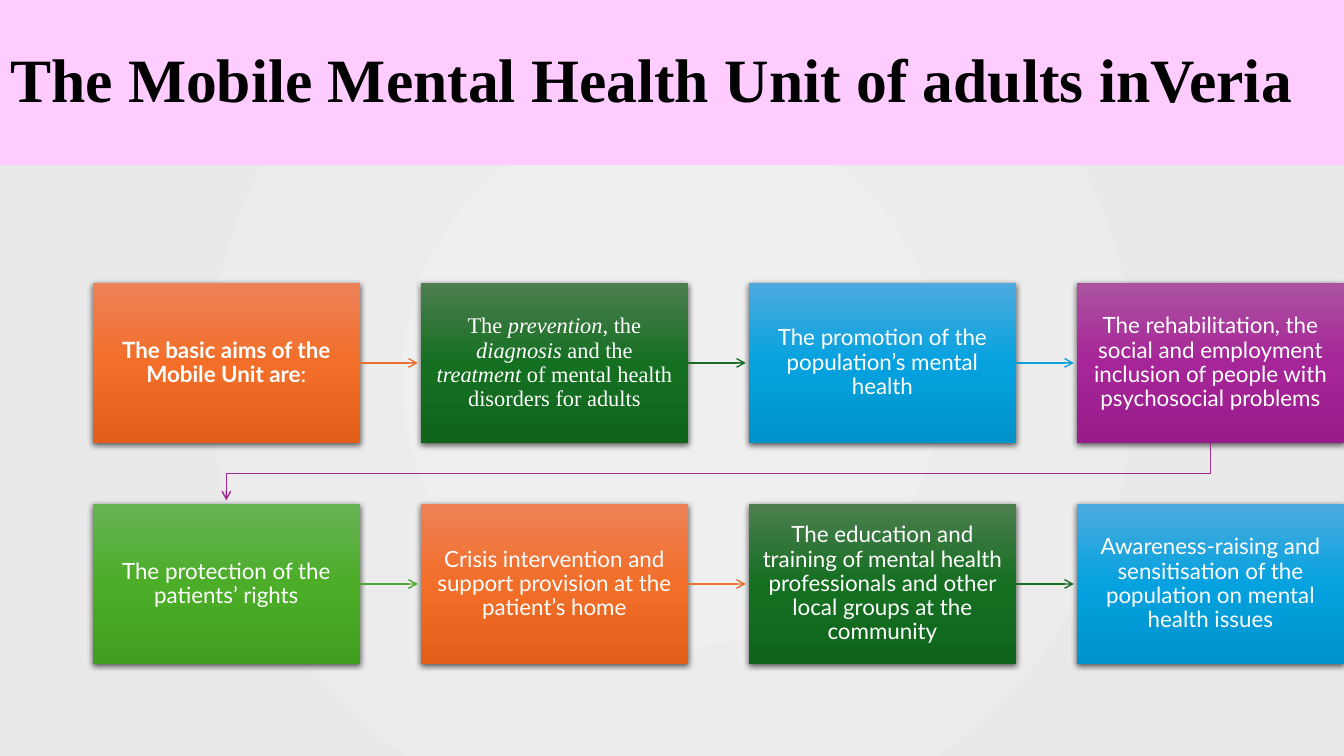
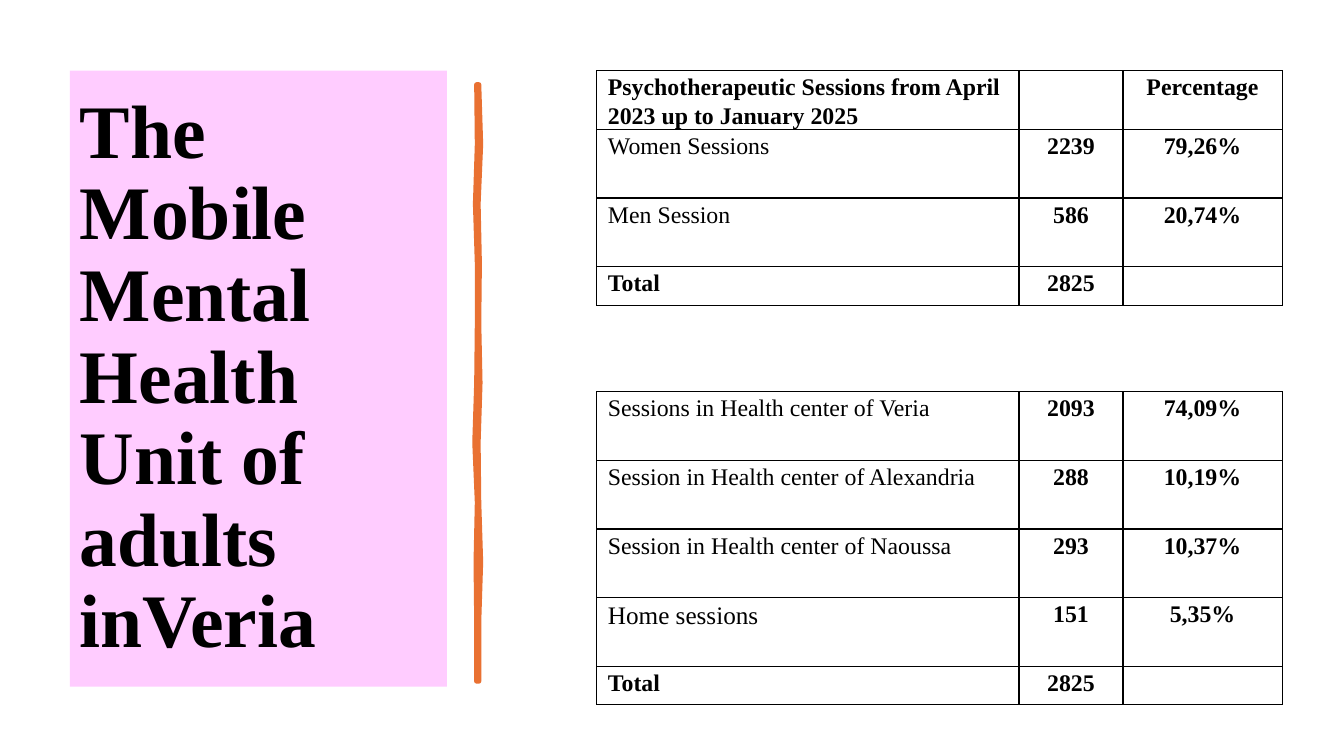
import dataclasses

import lxml.etree
import pptx
import pptx.dml.color
import pptx.enum.shapes
import pptx.enum.text
import pptx.oxml.ns
import pptx.util

Cm = pptx.util.Cm
Pt = pptx.util.Pt
ALIGN = pptx.enum.text.PP_ALIGN
ANCHOR = pptx.enum.text.MSO_ANCHOR
SHAPE = pptx.enum.shapes.MSO_SHAPE


@dataclasses.dataclass(frozen=True)
class Theme:
    width: float = 33.87
    height: float = 19.05
    serif: str = "Times New Roman"
    sans: str = "Lato"
    black: str = "000000"
    white: str = "FFFFFF"
    band: str = "FFCCFF"
    accent: str = "E97132"
    backdrop: tuple = ((10, "EFEFEF"), (85, "E9E9E9"))
    wide_title: int = 44
    tall_title: int = 54
    card_size: int = 16
    table_size: int = 17
    home_size: int = 18
    # Arrow colour, then the gradient of the card from top to bottom
    cards: tuple = (
        ("E97132", ("ED8257", "F26E29", "E25F1A")),
        ("196B24", ("4D7E50", "156F21", "0F661B")),
        ("0F9ED5", ("4CAADF", "05A2DF", "0092CB")),
        ("A02B93", ("AC53A0", "A62598", "991C8B")),
        ("4EA72E", ("66B354", "4BAD28", "409F1E")),
    )


THEME = Theme()
TITLE = "The Mobile Mental Health Unit of adults inVeria"

# Each card is a list of runs: text and the formats that differ
AIMS = [
    [("The basic aims of the Mobile Unit are", {"bold": True}), (":", {})],
    [(text, {"name": THEME.serif, "italic": italic}) for text, italic in (
        ("The ", False), ("prevention", True), (", the ", False),
        ("diagnosis", True), (" and the ", False), ("treatment", True),
        (" of mental health disorders for adults", False))],
    [("The promotion of the population’s mental health", {})],
    [("The rehabilitation, the social and employment inclusion of people "
      "with psychosocial problems", {})],
    [("The protection of the patients’ rights", {})],
    [("Crisis intervention and support provision at the patient’s home", {})],
    [("The education and training of mental health professionals and other "
      "local groups at the community", {})],
    [("Awareness-raising and sensitisation of the population on mental "
      "health issues", {})],
]

# Row height, then the three cells
SESSIONS = [
    (1.47, ("Psychotherapeutic Sessions from April 2023 up to January 2025",
            "", "Percentage")),
    (1.73, ("Women Sessions", "2239", "79,26%")),
    (1.73, ("Men Session", "586", "20,74%")),
    (0.97, ("Total", "2825", "")),
    (2.18, ("", "", "")),
    (1.73, ("Sessions in Health center of Veria", "2093", "74,09%")),
    (1.73, ("Session in Health center of Alexandria", "288", "10,19%")),
    (1.73, ("Session in Health center of Naoussa", "293", "10,37%")),
    (1.73, ("Home sessions", "151", "5,35%")),
    (0.97, ("Total", "2825", "")),
]


# Shared helpers
def set_formats(target, formats):
    for name, value in formats.items():
        setattr(target, name, value)


def rgb(value):
    return pptx.dml.color.RGBColor.from_string(value)


def add_element(parent, tag, **attributes):
    element = lxml.etree.SubElement(parent, pptx.oxml.ns.qn(tag))
    for name, value in attributes.items():
        element.set(name, str(value))
    return element


def add_color(parent, color, alpha=None):
    element = add_element(parent, "a:srgbClr", val=color)
    if alpha is not None:
        add_element(element, "a:alpha", val=alpha * 1000)


def set_gradient(shape, stops, radial=False):
    shape.fill.gradient()
    gradient = shape._element.spPr.find(pptx.oxml.ns.qn("a:gradFill"))
    gradient.clear()
    stop_list = add_element(gradient, "a:gsLst")
    for position, color in stops:
        add_color(add_element(stop_list, "a:gs", pos=position * 1000), color)
    if radial:
        center = add_element(gradient, "a:path", path="circle")
        add_element(center, "a:fillToRect", l=50000, t=50000, r=50000, b=50000)
    else:
        add_element(gradient, "a:lin", ang=5400000, scaled=0)


def write_runs(paragraph, runs, base):
    for text, changes in runs:
        run = paragraph.add_run()
        run.text = text
        formats = {**base, **changes}
        color = formats.pop("color")
        set_formats(run.font, formats)
        run.font.color.rgb = rgb(color)


def place_title(slide, box, size):
    title = slide.shapes.title
    set_formats(title, dict(zip(("left", "top", "width", "height"),
                                map(Cm, box))))
    title.fill.solid()
    title.fill.fore_color.rgb = rgb(THEME.band)
    set_formats(title.text_frame, {
        "word_wrap": True, "vertical_anchor": ANCHOR.MIDDLE,
        "auto_size": pptx.enum.text.MSO_AUTO_SIZE.NONE})
    paragraph = title.text_frame.paragraphs[0]
    set_formats(paragraph, {"alignment": ALIGN.LEFT, "line_spacing": 0.9})
    write_runs(paragraph, [(TITLE, {})], {
        "name": THEME.serif, "size": Pt(size), "bold": True,
        "color": THEME.black})


# Parts of the aims slide
def add_backdrop(slide):
    backdrop = slide.shapes.add_shape(
        SHAPE.RECTANGLE, 0, 0, Cm(THEME.width), Cm(THEME.height))
    backdrop.shadow.inherit = False
    backdrop.line.fill.background()
    set_gradient(backdrop, THEME.backdrop, radial=True)
    slide.shapes._spTree.insert(2, backdrop._element)  # behind the title


def add_card(slide, box, colors, runs):
    card = slide.shapes.add_shape(SHAPE.RECTANGLE, *map(Cm, box))
    card.line.fill.background()
    set_gradient(card, zip((0, 50, 100), colors))
    card.shadow.inherit = False
    effects = card._element.spPr.find(pptx.oxml.ns.qn("a:effectLst"))
    shadow = add_element(effects, "a:outerShdw", blurRad=Pt(4.5),
                         dist=Pt(1.5), dir=5400000, rotWithShape=0)
    add_color(shadow, THEME.black, 63)
    frame = card.text_frame
    set_formats(frame, {
        "word_wrap": True, "vertical_anchor": ANCHOR.MIDDLE,
        "margin_left": Cm(0.33), "margin_right": Cm(0.33),
        "margin_top": Cm(0.35), "margin_bottom": Cm(0.35)})
    paragraph = frame.paragraphs[0]
    set_formats(paragraph, {"alignment": ALIGN.CENTER, "line_spacing": 0.9})
    write_runs(paragraph, runs, {
        "name": THEME.sans, "size": Pt(THEME.card_size),
        "color": THEME.white})


def add_arrow(slide, points, color):
    points = [(Cm(x), Cm(y)) for x, y in points]
    if len(points) == 2:
        arrow = slide.shapes.add_connector(
            pptx.enum.shapes.MSO_CONNECTOR.STRAIGHT, *points[0], *points[1])
        add_element(arrow._element.spPr, "a:effectLst")
    else:
        builder = slide.shapes.build_freeform(*points[0])
        builder.add_line_segments(points[1:], close=False)
        arrow = builder.convert_to_shape()
        arrow.fill.background()
        arrow.shadow.inherit = False
    arrow.line.color.rgb = rgb(color)
    arrow.line.width = Pt(1)
    add_element(arrow.get_or_add_ln(), "a:tailEnd", type="arrow")


def add_card_flow(slide, box, columns=4):
    left, top, width, height = box
    card_width, card_height, clearance = 6.73, 4.05, 0.08
    step_x = (width - card_width) / (columns - 1)
    step_y = height - card_height
    for index, runs in enumerate(AIMS):
        row, column = divmod(index, columns)
        x, y = left + column * step_x, top + row * step_y
        color, gradient = THEME.cards[index % len(THEME.cards)]
        add_card(slide, (x, y, card_width, card_height), gradient, runs)
        if index == len(AIMS) - 1:
            continue
        if column < columns - 1:
            middle = y + card_height / 2
            points = [(x + card_width, middle),
                      (x + step_x - clearance, middle)]
        else:  # turn back to the start of the next row
            start, end = x + card_width / 2, left + card_width / 2
            turn = y + (card_height + step_y) / 2
            points = [(start, y + card_height), (start, turn),
                      (end, turn), (end, y + step_y - clearance)]
        add_arrow(slide, points, color)


# Parts of the sessions slide
def add_brush_line(slide, box):
    left, top, width, height = box
    left_edge = (0.3, 0.4, 0.1, 0.4, 0.4, 0.3, 0, 0.4, 0.2, 0.3, 0.3)
    right_edge = (0.7, 1, 0.6, 0.8, 0.7, 0.9, 0.6, 0.7, 1, 0.7, 0.7)
    step = height / (len(left_edge) - 1)
    sides = [[(Cm(left + share * width), Cm(top + index * step))
              for index, share in enumerate(edge)]
             for edge in (left_edge, right_edge)]
    outline = sides[0] + sides[1][::-1]
    builder = slide.shapes.build_freeform(*outline[0])
    builder.add_line_segments(outline[1:], close=True)
    brush = builder.convert_to_shape()
    brush.shadow.inherit = False
    brush.fill.solid()
    brush.fill.fore_color.rgb = rgb(THEME.accent)
    brush.line.color.rgb = rgb(THEME.accent)
    brush.line.width = Pt(3.25)


def set_borders(cell, visible):
    properties = cell._tc.get_or_add_tcPr()
    for side in "LRTB":
        line = add_element(properties, f"a:ln{side}", w=Pt(1))
        if side in visible:
            add_color(add_element(line, "a:solidFill"), THEME.black)
        else:
            add_element(line, "a:noFill")


def add_sessions_table(slide, box):
    frame = slide.shapes.add_table(len(SESSIONS), 3, *map(Cm, box))
    table = frame.table
    set_formats(table, {"first_row": False, "horz_banding": False})
    for column, width in zip(table.columns, (10.64, 2.62, 4.01)):
        column.width = Cm(width)
    for row, (height, texts) in zip(table.rows, SESSIONS):
        row.height = Cm(height)
        strong_row = "" in texts  # header and total rows
        for index, (cell, text) in enumerate(zip(row.cells, texts)):
            set_borders(cell, "LRTB" if any(texts) else "TB")
            cell.fill.background()
            set_formats(cell, {
                "margin_left": Cm(0.28), "margin_right": Cm(0.28),
                "margin_top": Cm(0.05), "margin_bottom": 0})
            if not text:
                continue
            paragraph = cell.text_frame.paragraphs[0]
            set_formats(paragraph, {
                "alignment": ALIGN.CENTER if index else ALIGN.LEFT,
                "line_spacing": 1.07, "space_after": Pt(8)})
            size = (THEME.home_size if text == "Home sessions"
                    else THEME.table_size)
            write_runs(paragraph, [(text, {})], {
                "name": THEME.serif, "size": Pt(size),
                "bold": strong_row or index > 0, "color": THEME.black})


# Slides
def build_aims_slide(slide):
    add_backdrop(slide)
    place_title(slide, (0, 0, THEME.width, 4.16), THEME.wide_title)
    add_card_flow(slide, (2.34, 7.12, 31.53, 9.62))


def build_sessions_slide(slide):
    place_title(slide, (1.76, 1.78, 9.5, 15.52), THEME.tall_title)
    add_brush_line(slide, (11.96, 2.13, 0.16, 15.04))
    add_sessions_table(slide, (15.04, 1.78, 17.27, 15.97))


def main():
    presentation = pptx.Presentation()
    presentation.slide_width = Cm(THEME.width)
    presentation.slide_height = Cm(THEME.height)
    title_only = presentation.slide_layouts[5]
    for build in (build_aims_slide, build_sessions_slide):
        build(presentation.slides.add_slide(title_only))
    presentation.save("out.pptx")


if __name__ == "__main__":
    main()
